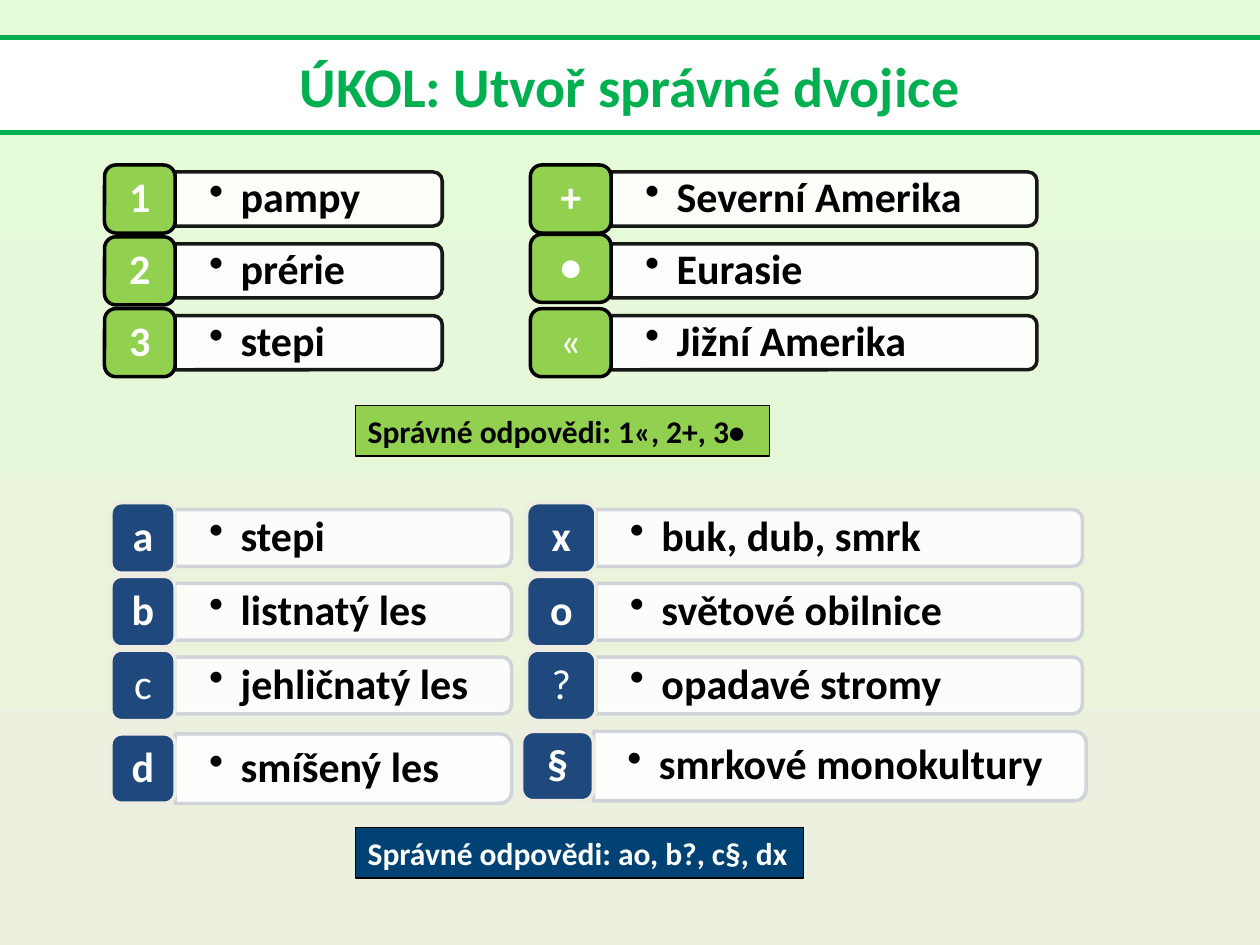
from lxml.etree import SubElement
from pptx import Presentation
from pptx.dml.color import RGBColor
from pptx.enum.shapes import MSO_SHAPE
from pptx.enum.text import MSO_ANCHOR, MSO_AUTO_SIZE, PP_ALIGN
from pptx.oxml.ns import qn
from pptx.util import Inches, Pt

WHITE = RGBColor(0xFF, 0xFF, 0xFF)
BLACK = RGBColor(0, 0, 0)
GREEN = RGBColor(0x00, 0xB0, 0x50)
LIME = RGBColor(0x92, 0xD0, 0x50)
NAVY = RGBColor(0x1F, 0x49, 0x7D)
DEEP = RGBColor(0x00, 0x42, 0x74)
CREAM = RGBColor(0xEE, 0xEC, 0xE1)
GREY = RGBColor(0xCD, 0xD0, 0xD7)
SKY = RGBColor(0xE5, 0xFA, 0xD6)
SAND = RGBColor(0xEB, 0xF1, 0xDE)

TITLE = "ÚKOL: Utvoř správné dvojice"
LANDS = {"fill": LIME, "edge": BLACK, "rim": BLACK, "tall": 0.54, "bar": 0.43, "step": 0.57}
WOODS = {"fill": NAVY, "edge": CREAM, "rim": GREY, "tall": 0.56, "bar": 0.45, "step": 0.585}
LAST = {**WOODS, "tall": 0.55, "bar": 0.55}
BLOCKS = [
    (LANDS, 0.83, 1.58, 0.56, 2.12, [("1", "pampy"), ("2", "prérie"), ("3", "stepi")]),
    (LANDS, 4.21, 1.58, 0.64, 3.38,
     [("+", "Severní Amerika"), ("•", "Eurasie"), ("«", "Jižní Amerika")]),
    (WOODS, 0.88, 4.27, 0.51, 2.67,
     [("a", "stepi"), ("b", "listnatý les"), ("c", "jehličnatý les")]),
    (LAST, 0.88, 6.1, 0.51, 2.67, [("d", "smíšený les")]),
    (WOODS, 4.18, 4.27, 0.55, 3.86,
     [("x", "buk, dub, smrk"), ("o", "světové obilnice"), ("?", "opadavé stromy")]),
    (LAST, 4.14, 6.08, 0.57, 3.91, [("§", "smrkové monokultury")]),
]
THIN = "«c?"
NUDGE = {"•": -0.02}
KEYS = [
    ("Správné odpovědi: 1«, 2+, 3•", 3.22, 3.29, LIME, BLACK),
    ("Správné odpovědi: ao, b?, c§, dx", 6.57, 3.56, DEEP, WHITE),
]


def paint(shape, fill, edge, width):
    shape.fill.solid()
    shape.fill.fore_color.rgb = fill
    shape.line.color.rgb = edge
    shape.line.width = Pt(width)


def write(shape, text, size, color, bold=True):
    frame = shape.text_frame
    frame.text = text
    font = frame.paragraphs[0].runs[0].font
    font.name, font.size, font.bold = "Calibri", Pt(size), bold
    font.color.rgb = color
    return frame


def add_bar(slide, left, mid, wide, high, rim):
    box = [left + (wide - high) / 2, mid - wide / 2, high, wide]
    bar = slide.shapes.add_shape(MSO_SHAPE.ROUND_2_SAME_RECTANGLE, *map(Inches, box))
    bar.rotation = 90
    bar.shadow.inherit = False
    paint(bar, WHITE, rim, 2)
    for color in bar._element.spPr.iter(qn("a:srgbClr")):
        SubElement(color, qn("a:alpha"), val="90000")


def add_label(slide, left, mid, wide, high, text):
    box = [left, mid - high / 2, wide, high]
    label = slide.shapes.add_textbox(*map(Inches, box))
    frame = write(label, text, 24, BLACK)
    frame.word_wrap = True
    frame.vertical_anchor = MSO_ANCHOR.MIDDLE
    frame.margin_left = frame.margin_right = Inches(0.27)
    frame.margin_top = frame.margin_bottom = Inches(0)
    para = frame.paragraphs[0]
    para.line_spacing = 0.9
    props = para._p.get_or_add_pPr()
    props.set("marL", str(Inches(0.25)))
    props.set("indent", str(-Inches(0.25)))
    SubElement(props, qn("a:buChar"), char="•")


def add_badge(slide, left, mid, wide, look, mark):
    top = mid - look["tall"] / 2 + NUDGE.get(mark, 0)
    box = [left, top, wide, look["tall"]]
    badge = slide.shapes.add_shape(MSO_SHAPE.ROUNDED_RECTANGLE, *map(Inches, box))
    badge.shadow.inherit = False
    paint(badge, look["fill"], look["edge"], 2)
    frame = write(badge, mark, 24, WHITE, mark not in THIN)
    frame.vertical_anchor = MSO_ANCHOR.MIDDLE
    frame.margin_left = frame.margin_right = Inches(0)
    frame.paragraphs[0].alignment = PP_ALIGN.CENTER
    frame.paragraphs[0].line_spacing = 0.9


def add_key(slide, text, top, wide, fill, color):
    key = slide.shapes.add_textbox(*map(Inches, [2.82, top, wide, 0.4]))
    paint(key, fill, BLACK, 0.75)
    frame = write(key, text, 18, color)
    frame.word_wrap = False
    frame.auto_size = MSO_AUTO_SIZE.SHAPE_TO_FIT_TEXT


def main():
    """Build the pair-matching slide and save it."""
    deck = Presentation()
    deck.slide_width, deck.slide_height = Inches(10), Inches(7.5)
    slide = deck.slides.add_slide(deck.slide_layouts[5])
    back = slide.background.fill
    back.gradient()
    back.gradient_angle = 270
    for stop, color, place in zip(back.gradient_stops, (SKY, SAND), (0, 1)):
        stop.color.rgb = color
        stop.position = place

    title = slide.shapes.title
    title.left, title.top, title.width, title.height = map(Inches, [-0.12, 0.3, 10.24, 0.75])
    paint(title, WHITE, GREEN, 3)
    frame = write(title, TITLE, 32, GREEN)
    frame.vertical_anchor = MSO_ANCHOR.MIDDLE
    frame.paragraphs[0].alignment = PP_ALIGN.CENTER

    for look, left, first, wide, span, rows in BLOCKS:
        for i, (mark, text) in enumerate(rows):
            mid = first + i * look["step"]
            add_bar(slide, left + wide, mid, span, look["bar"], look["rim"])
            add_label(slide, left + wide, mid, span, look["bar"] - 0.04, text)
            add_badge(slide, left, mid, wide, look, mark)
    for key in KEYS:
        add_key(slide, *key)
    deck.save("out.pptx")


if __name__ == "__main__":
    main()
